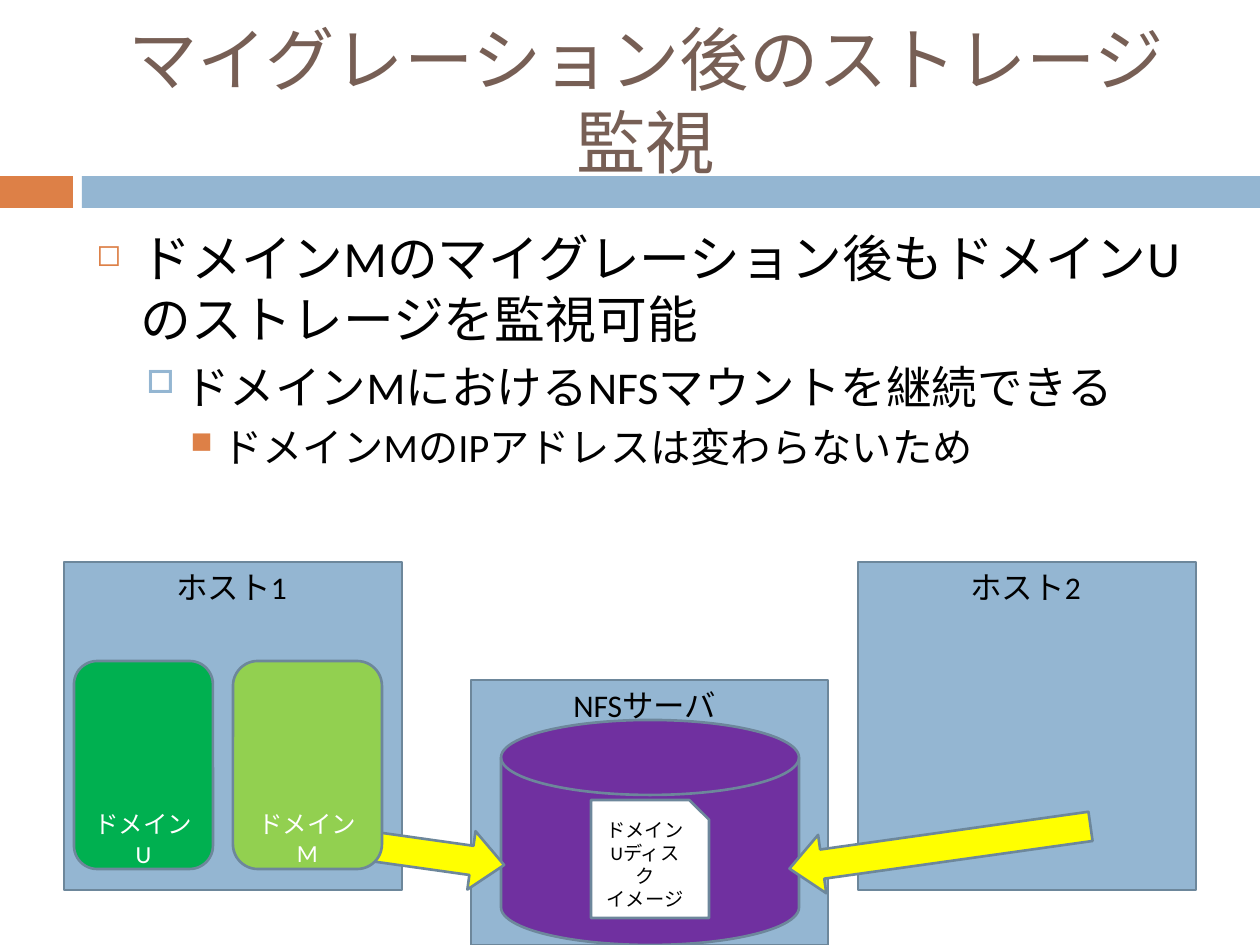
import pptx
import pptx.dml.color
import pptx.enum.shapes
import pptx.enum.text
import pptx.oxml
import pptx.oxml.ns
import pptx.util

PX = 914400 / 126
SHAPES = pptx.enum.shapes.MSO_SHAPE
ALIGN = pptx.enum.text.PP_ALIGN
ANCHOR = pptx.enum.text.MSO_ANCHOR
BLUE, ORANGE, OUTLINE = "94B6D2", "DD8047", "6D879B"
BLACK, WHITE, YELLOW = "000000", "FFFFFF", "FFFF00"


def emu(length):
    return pptx.util.Emu(round(length * PX))


def rgb(value):
    return pptx.dml.color.RGBColor.from_string(value)


def write_text(shape, *lines, size, color=BLACK, align=ALIGN.LEFT, anchor=ANCHOR.TOP, bottom=6):
    frame = shape.text_frame
    frame.word_wrap = True
    frame.vertical_anchor = anchor
    frame.margin_bottom = emu(bottom)
    for index, line in enumerate(lines):
        paragraph = frame.add_paragraph() if index else frame.paragraphs[0]
        paragraph.alignment = align
        run = paragraph.add_run()
        run.text = line
        run.font.name = "Calibri"
        run.font.size = pptx.util.Pt(size)
        run.font.color.rgb = rgb(color)
    return frame


def add_label(slide, box, *lines, **style):
    shape = slide.shapes.add_textbox(*map(emu, box))
    return write_text(shape, *lines, **style)


def add_block(slide, kind, box, fill, line=OUTLINE):
    shape = slide.shapes.add_shape(kind, *map(emu, box))
    shape.shadow.inherit = False
    shape.fill.solid()
    shape.fill.fore_color.rgb = rgb(fill)
    if line:
        shape.line.color.rgb = rgb(line)
        shape.line.width = pptx.util.Pt(1.5)
    else:
        shape.line.fill.background()
    return shape


def set_bullet(paragraph, level, character, color, percent, left, hanging, before):
    paragraph.level = level
    paragraph.space_before = pptx.util.Pt(before)
    properties = paragraph._p.get_or_add_pPr()
    properties.set("marL", str(emu(left)))
    properties.set("indent", str(-emu(hanging)))
    namespace = pptx.oxml.ns.nsdecls("a")
    for xml in (
        f'<a:buClr {namespace}><a:srgbClr val="{color}"/></a:buClr>',
        f'<a:buSzPct {namespace} val="{percent * 1000}"/>',
        f'<a:buChar {namespace} char="{character}"/>',
    ):
        properties.append(pptx.oxml.parse_xml(xml))


def add_header(slide, box):
    left, top, width, height = box
    bar_top, bar_height = top + 176, height - 176
    add_block(slide, SHAPES.RECTANGLE, (left, bar_top, 73, bar_height), ORANGE, None)
    add_block(slide, SHAPES.RECTANGLE, (left + 82, bar_top, width - 82, bar_height), BLUE, None)
    add_label(slide, (left + 84, top + 31, 1124, 137), "マイグレーション後のストレージ監視",
              size=39.6, color="775F55", align=ALIGN.CENTER, anchor=ANCHOR.MIDDLE)


def add_body(slide, box):
    items = [
        ("ドメインMのマイグレーション後もドメインUのストレージを監視可能", 29, ("◻", ORANGE, 60, 44, 44, 7)),
        ("ドメインMにおけるNFSマウントを継続できる", 26, ("□", BLUE, 70, 88, 38, 5.5)),
        ("ドメインMのIPアドレスは変わらないため", 23, ("■", ORANGE, 75, 126, 32, 5)),
    ]
    frame = add_label(slide, box, *[text for text, _, _ in items], size=29)
    for level, (paragraph, (_, size, bullet)) in enumerate(zip(frame.paragraphs, items)):
        paragraph.runs[0].font.size = pptx.util.Pt(size)
        set_bullet(paragraph, level, *bullet)


def add_host(slide, box, name, label_width):
    left, top, _, _ = box
    add_block(slide, SHAPES.RECTANGLE, box, BLUE)
    add_label(slide, (left + 100, top, label_width, 50), name, size=18)


def add_domain(slide, box, name, fill):
    shape = add_block(slide, SHAPES.ROUNDED_RECTANGLE, box, fill)
    write_text(shape, name, size=14, color=WHITE, align=ALIGN.CENTER,
               anchor=ANCHOR.BOTTOM, bottom=-6)


def add_server(slide, box):
    left, top, _, _ = box
    add_block(slide, SHAPES.RECTANGLE, box, BLUE)
    add_block(slide, SHAPES.FLOWCHART_MAGNETIC_DISK, (left + 30, top + 40, 298, 225), "7030A0")
    add_label(slide, (left + 90, top, 198, 50), "NFSサーバ", size=18)
    image = add_block(slide, SHAPES.SNIP_1_RECTANGLE, (left + 120, top + 120, 118, 118), WHITE)
    write_text(image, "ドメインUディスク", "イメージ", size=11,
               align=ALIGN.CENTER, anchor=ANCHOR.MIDDLE)


def add_arrow(slide, box, rotation):
    arrow = add_block(slide, SHAPES.RIGHT_ARROW, box, YELLOW)
    arrow.adjustments[1] = 0.56
    arrow.rotation = rotation


def main():
    presentation = pptx.Presentation()
    presentation.slide_width = emu(1260)
    presentation.slide_height = emu(945)
    slide = presentation.slides.add_slide(presentation.slide_layouts[6])
    add_header(slide, (0, 0, 1260, 208))
    add_body(slide, (84, 221, 1124, 620))
    add_host(slide, (64, 562, 338, 328), "ホスト1", 141)
    add_host(slide, (858, 562, 338, 328), "ホスト2", 145)
    add_server(slide, (471, 680, 357, 265))
    add_arrow(slide, (325, 823, 180, 59), 8)
    add_arrow(slide, (788, 818, 304, 59), 172)
    add_domain(slide, (74, 661, 139, 208), "ドメインU", "00B050")
    add_domain(slide, (233, 661, 149, 208), "ドメインM", "92D050")
    presentation.save("out.pptx")


if __name__ == "__main__":
    main()
